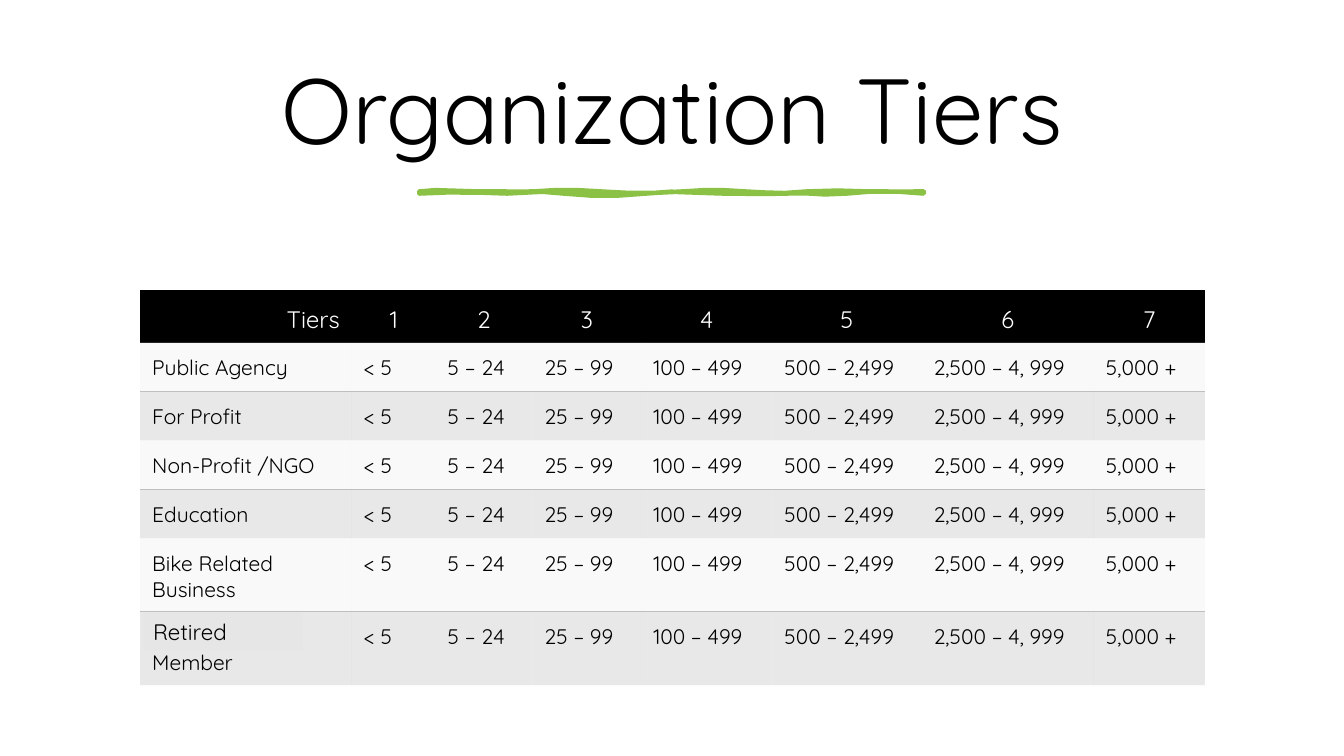
from lxml import etree
from pptx import Presentation
from pptx import util as u
from pptx.dml import color as dml
from pptx.enum import shapes, text
from pptx.oxml import ns

FONT = "Quicksand"
BLACK, WHITE, GREEN = "000000", "FFFFFF", "8BC145"
LIGHT, GREY = "F2F2F2", "BFBFBF"
ALIGN = text.PP_ALIGN
ANCHOR = text.MSO_ANCHOR


def paint(fill, color, alpha=None):
    """Give a fill a solid colour, with opacity in percent if wanted."""
    fill.solid()
    fill.fore_color.rgb = dml.RGBColor.from_string(color)
    if alpha:
        tone = fill._xPr.find(".//" + ns.qn("a:srgbClr"))
        etree.SubElement(tone, ns.qn("a:alpha"), val=str(alpha * 1000))


def write(frame, words, size, color=BLACK, align=ALIGN.LEFT, spacing=None):
    """Put one formatted paragraph into a text frame."""
    frame.word_wrap = True
    para = frame.paragraphs[0]
    para.alignment = align
    para.line_spacing = spacing
    span = para.add_run()
    span.text = words
    span.font.name = FONT
    span.font.size = u.Pt(size)
    paint(span.font.fill, color)


deck = Presentation()
deck.slide_width, deck.slide_height = u.Inches(13.33), u.Inches(7.5)
page = deck.slides.add_slide(deck.slide_layouts[5])
paint(page.background.fill, WHITE)

# Title
title = page.shapes.title
title.left, title.top = u.Inches(0.7), u.Inches(0.45)
title.width, title.height = u.Inches(11.93), u.Inches(1.37)
title.text_frame.vertical_anchor = ANCHOR.MIDDLE
write(title.text_frame, "Organization Tiers", 66, align=ALIGN.CENTER, spacing=0.9)

# Hand-drawn underline: Bezier curves, each two controls and an end point
start = (4.16, 1.9)
curves = [
    ((4.28, 1.87), (4.54, 1.9), (4.73, 1.9)),
    ((4.92, 1.89), (5.09, 1.91), (5.29, 1.9)),
    ((5.49, 1.88), (5.74, 1.88), (5.96, 1.9)),
    ((6.17, 1.92), (6.53, 1.92), (6.77, 1.9)),
    ((7.02, 1.88), (7.14, 1.88), (7.39, 1.9)),
    ((7.63, 1.91), (7.74, 1.93), (8, 1.9)),
    ((8.26, 1.87), (8.67, 1.92), (9.16, 1.9)),
    ((9.17, 1.91), (9.16, 1.91), (9.16, 1.92)),
    ((8.95, 1.9), (8.65, 1.88), (8.4, 1.92)),
    ((8.15, 1.95), (8.01, 1.9), (7.79, 1.92)),
    ((7.56, 1.93), (7.47, 1.92), (7.17, 1.92)),
    ((6.87, 1.92), (6.67, 1.88), (6.41, 1.92)),
    ((6.14, 1.95), (5.85, 1.95), (5.59, 1.92)),
    ((5.34, 1.88), (5.23, 1.92), (5.03, 1.92)),
    ((4.83, 1.91), (4.38, 1.9), (4.16, 1.92)),
]
STEPS = 3
points = []
knot = start
for first, second, end in curves:
    for step in range(1, STEPS + 1):
        t = step / STEPS
        weights = ((1 - t) ** 3, 3 * t * (1 - t) ** 2, 3 * t * t * (1 - t), t ** 3)
        corners = (knot, first, second, end)
        points.append([u.Inches(sum(w * c[axis] for w, c in zip(weights, corners)))
                       for axis in (0, 1)])
    knot = end
builder = page.shapes.build_freeform(*[u.Inches(value) for value in start])
builder.add_line_segments(points, close=True)
underline = builder.convert_to_shape()
underline.shadow.inherit = False
paint(underline.fill, GREEN)
paint(underline.line.fill, GREEN)
underline.line.width = u.Pt(3.25)

# Tiers table
header = ["Tiers", "1", "2", "3", "4", "5", "6", "7"]
groups = ["Public Agency", "For Profit", "Non-Profit /NGO", "Education",
          "Bike Related Business", "Member"]
tiers = ["< 5", "5 – 24", "25 – 99", "100 – 499", "500 – 2,499",
         "2,500 – 4, 999", "5,000 +"]
rows = [header] + [[group] + tiers for group in groups]
widths = [2.1, 0.83, 0.96, 1.08, 1.3, 1.48, 1.71, 1.1]
top_row, tall_row, table_height = 0.52, 0.73, 3.92
short_row = (table_height - top_row - 2 * tall_row) / 4
heights = [top_row] + [short_row] * 4 + [tall_row] * 2
holder = page.shapes.add_table(len(rows), len(widths), u.Inches(1.39), u.Inches(2.88),
                               u.Inches(sum(widths)), u.Inches(table_height))
table = holder.table
style = table._tbl.tblPr.find(ns.qn("a:tableStyleId"))
style.text = "{2D5ABB26-0587-4C30-8999-92F81FD0307C}"  # no style, no grid
for column, width in zip(table.columns, widths):
    column.width = u.Inches(width)

for r, (values, height) in enumerate(zip(rows, heights)):
    table.rows[r].height = u.Inches(height)
    for c, value in enumerate(values):
        cell = table.cell(r, c)
        cell.margin_left = cell.margin_right = cell.margin_top = u.Inches(0.12)
        cell.margin_bottom = u.Inches(0.06)
        ruled = None
        if r == 0:
            cell.vertical_anchor = ANCHOR.MIDDLE
            write(cell.text_frame, value, 17, WHITE, ALIGN.CENTER if c else ALIGN.RIGHT)
            paint(cell.fill, BLACK)
        else:
            write(cell.text_frame, value, 15)
            is_light = r % 2 == 1
            paint(cell.fill, *((LIGHT, 45) if is_light else (GREY, 35)))
            ruled = "a:lnB" if is_light else "a:lnT"
        # Only a light row and the grey row below it share a rule
        for place, side in enumerate(("a:lnL", "a:lnR", "a:lnT", "a:lnB")):
            edge = etree.Element(ns.qn(side), w=str(u.Pt(1)))
            if side == ruled:
                solid = etree.SubElement(edge, ns.qn("a:solidFill"))
                etree.SubElement(solid, ns.qn("a:srgbClr"), val=GREY)
            else:
                etree.SubElement(edge, ns.qn("a:noFill"))
            cell._tc.tcPr.insert(place, edge)

# The last group's first word sits in a box above "Member"
member = table.cell(len(groups), 0)
member.vertical_anchor = ANCHOR.BOTTOM
member.margin_bottom = u.Inches(0.09)
box = page.shapes.add_shape(shapes.MSO_SHAPE.RECTANGLE, u.Inches(1.42), u.Inches(6.08),
                            u.Inches(1.58), u.Inches(0.37))
box.shadow.inherit = False
paint(box.fill, "E7E6E6")
box.line.fill.background()
box.text_frame.vertical_anchor = ANCHOR.TOP
box.text_frame.auto_size = text.MSO_AUTO_SIZE.SHAPE_TO_FIT_TEXT
write(box.text_frame, "Retired", 16)

deck.save("out.pptx")
